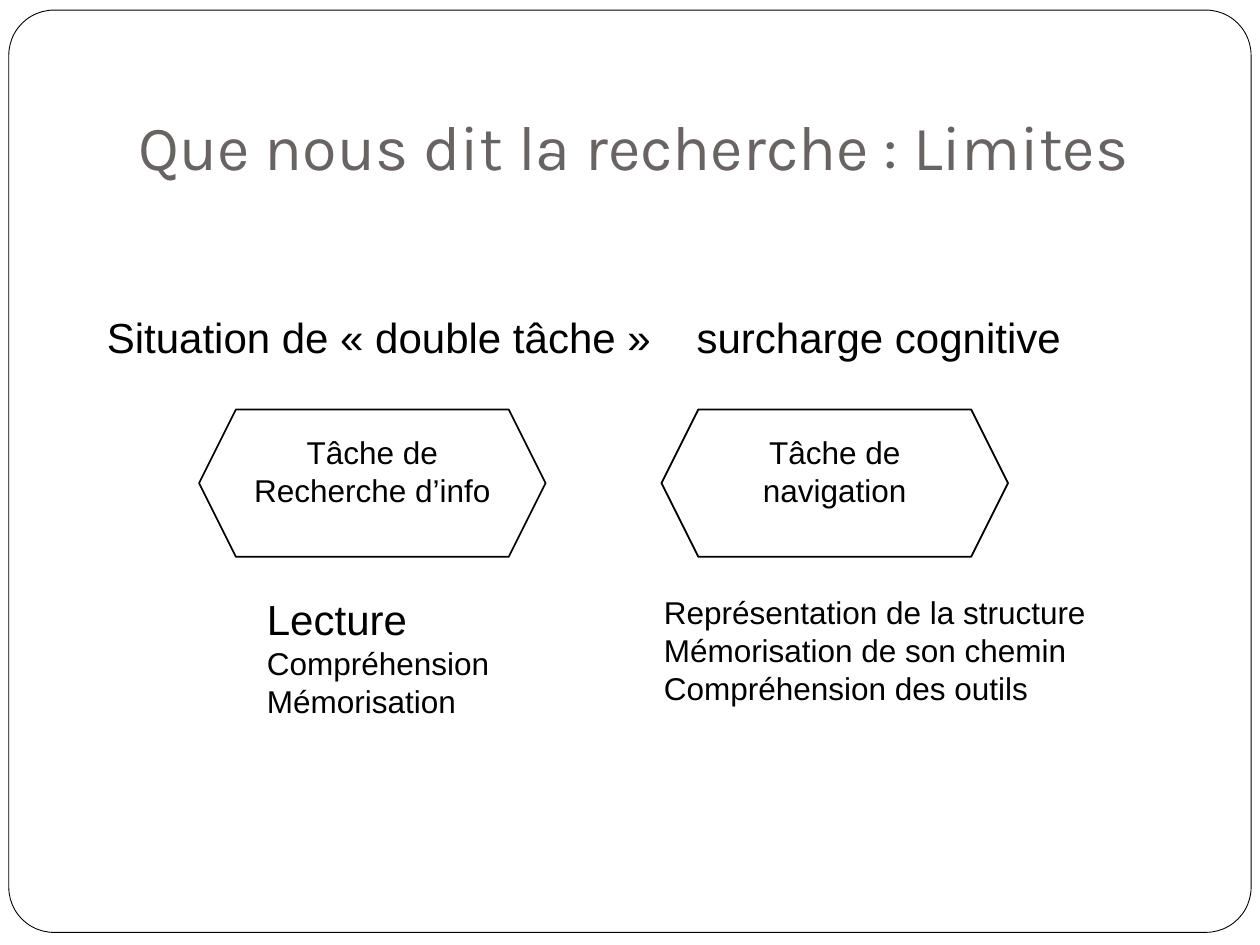
from lxml import etree
from pptx import Presentation
from pptx.dml.color import RGBColor
from pptx.enum import shapes, text
from pptx.oxml import ns
from pptx.util import Inches, Pt

BLACK = RGBColor(0x00, 0x00, 0x00)
WHITE = RGBColor(0xFF, 0xFF, 0xFF)
GREY = RGBColor(0x69, 0x64, 0x64)


def write_text(frame, lines, *, sizes=(18,), font="Arial", color=BLACK,
               align=text.PP_ALIGN.LEFT, anchor=text.MSO_ANCHOR.TOP,
               wrap=False, tab=None):
    """Write one paragraph per line; the last size serves the remaining lines."""
    frame.word_wrap = wrap
    frame.vertical_anchor = anchor
    for index, line in enumerate(lines):
        paragraph = frame.paragraphs[0] if index == 0 else frame.add_paragraph()
        paragraph.text = line
        paragraph.alignment = align
        if tab is not None:
            tabs = etree.SubElement(paragraph._p.get_or_add_pPr(), ns.qn("a:tabLst"))
            etree.SubElement(tabs, ns.qn("a:tab"), pos=str(tab), algn="l")
        paragraph.font.size = Pt(sizes[min(index, len(sizes) - 1)])
        paragraph.font.name = font
        paragraph.font.color.rgb = color


def add_outlined(slide, kind, box, adjustment, line_width):
    """Add a white shape with a thin black outline."""
    shape = slide.shapes.add_shape(kind, *map(Inches, box))
    shape.adjustments[0] = adjustment
    shape.shadow.inherit = False
    shape.fill.solid()
    shape.fill.fore_color.rgb = WHITE
    shape.line.color.rgb = BLACK
    shape.line.width = Pt(line_width)
    return shape


def add_frame(slide, box):
    """Put the rounded page frame behind everything else."""
    frame = add_outlined(slide, shapes.MSO_SHAPE.ROUNDED_RECTANGLE, box, 0.049, 0.5)
    slide.shapes._spTree.insert(2, frame._element)


def place_title(slide, box, title):
    """Move and format the title placeholder."""
    shape = slide.shapes.title
    shape.left, shape.top, shape.width, shape.height = map(Inches, box)
    frame = shape.text_frame
    frame.margin_bottom = Inches(0.1)
    write_text(frame, [title], sizes=(36,), font="Karla", color=GREY,
               anchor=text.MSO_ANCHOR.BOTTOM, wrap=True)


def add_text(slide, box, lines, **text_format):
    """Add a text box holding the given lines."""
    shape = slide.shapes.add_textbox(*map(Inches, box))
    write_text(shape.text_frame, lines, **text_format)


def add_task(slide, box, lines):
    """Add a hexagon naming one task."""
    hexagon = add_outlined(slide, shapes.MSO_SHAPE.HEXAGON, box, 0.25, 1)
    write_text(hexagon.text_frame, lines, align=text.PP_ALIGN.CENTER, wrap=True)


def main():
    """Build and save the slide."""
    presentation = Presentation()
    presentation.slide_width, presentation.slide_height = Inches(10), Inches(7.5)
    slide = presentation.slides.add_slide(presentation.slide_layouts[5])

    add_frame(slide, (0.07, 0.08, 9.86, 7.32))
    place_title(slide, (1, 0.3, 8.5, 1.25), "Que nous dit la recherche : Limites")
    add_text(slide, (0.75, 2.42, 7.86, 0.84),
             ["Situation de « double tâche »\tsurcharge cognitive"],
             sizes=(24,), wrap=True, tab=Inches(4.68))

    tasks = [
        (1.58, ["Tâche de", "Recherche d’info"], 2.02, 1.98,
         ["Lecture", "Compréhension", "Mémorisation"], (24, 18)),
        (5.25, ["Tâche de navigation"], 5.17, 3.58,
         ["Représentation de la structure", "Mémorisation de son chemin",
          "Compréhension des outils"], (18,)),
    ]
    for task_left, task, list_left, list_width, demands, sizes in tasks:
        add_task(slide, (task_left, 3.25, 2.75, 1.17), task)
        add_text(slide, (list_left, 4.66, list_width, 1.01), demands, sizes=sizes)

    presentation.save("out.pptx")


if __name__ == "__main__":
    main()
